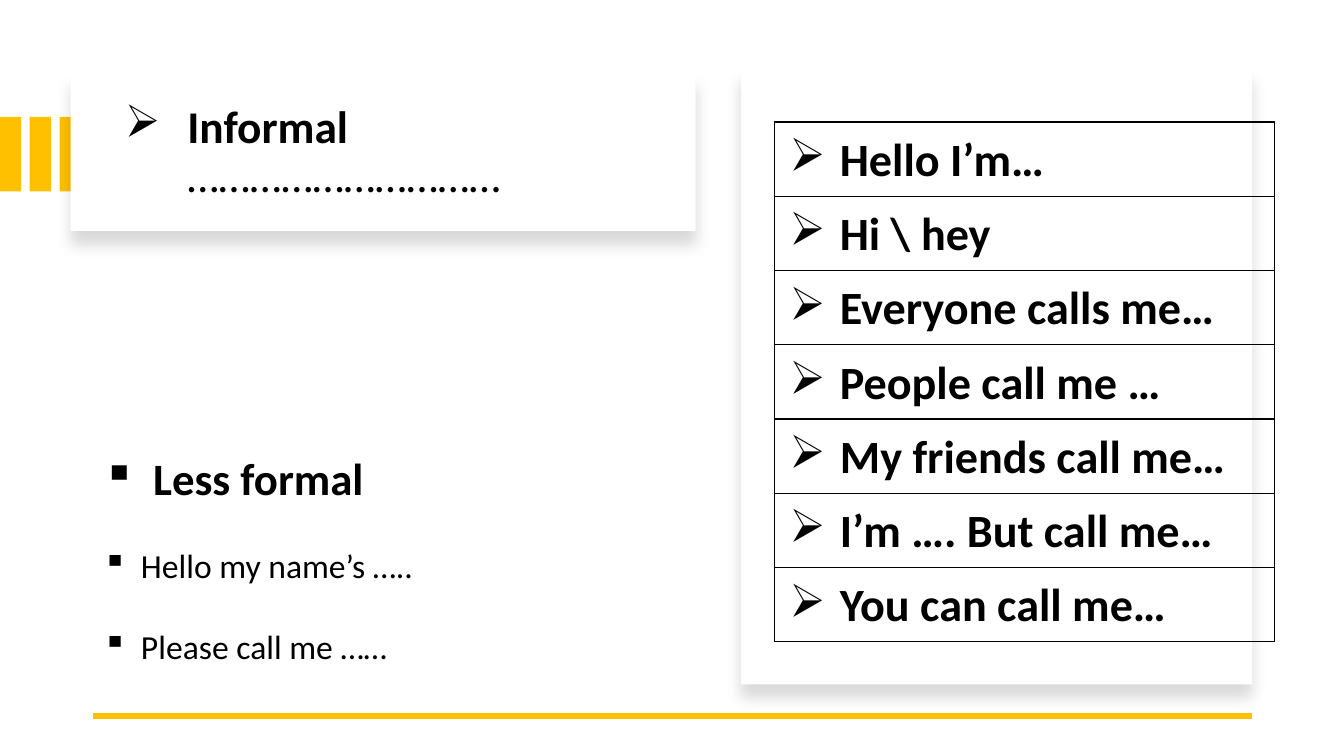
from lxml.etree import SubElement
from pptx import Presentation
from pptx.dml.color import RGBColor
from pptx.enum.shapes import MSO_CONNECTOR as Connector, MSO_SHAPE as Shape
from pptx.enum.text import MSO_ANCHOR as Anchor
from pptx.oxml import parse_xml
from pptx.oxml.ns import nsdecls, qn
from pptx.util import Inches, Pt

AMBER = RGBColor(0xFF, 0xC0, 0x00)
WHITE = RGBColor(0xFF, 0xFF, 0xFF)
BLACK = RGBColor(0x00, 0x00, 0x00)
ARROW, SQUARE = "➢", "▪"


def add_text(paragraph, text, size=24, bold=False):
    run = paragraph.add_run()
    run.text = text
    run.font.name = "Calibri"
    run.font.size = Pt(size)
    run.font.bold = bold
    run.font.color.rgb = BLACK


def set_bullet(paragraph, char, indent):
    props = paragraph._p.get_or_add_pPr()
    props.set("marL", str(Inches(indent)))
    props.set("indent", str(-Inches(indent)))
    SubElement(props, qn("a:buChar")).set("char", char)


class GreetingSlide:
    font_size = 33
    border = Pt(1)

    def __init__(self, presentation):
        self.slide = presentation.slides.add_slide(presentation.slide_layouts[6])

    def block(self, left, top, width, height, color):
        block = self.slide.shapes.add_shape(
            Shape.RECTANGLE, Inches(left), Inches(top), Inches(width), Inches(height))
        block.shadow.inherit = False
        block.fill.solid()
        block.fill.fore_color.rgb = color
        block.line.fill.background()
        return block

    def card(self, left, top, width, height):
        card = self.block(left, top, width, height, WHITE)
        effects = card._element.spPr.find(qn("a:effectLst"))
        effects.append(parse_xml(
            f'<a:outerShdw {nsdecls("a")} blurRad="{Pt(11)}" dist="{Pt(10)}" '
            f'dir="5400000" algn="t" rotWithShape="0"><a:srgbClr val="{BLACK}">'
            '<a:alpha val="15000"/></a:srgbClr></a:outerShdw>'))

    def rule(self, left, right, y):
        rule = self.slide.shapes.add_connector(
            Connector.STRAIGHT, Inches(right), Inches(y), Inches(left), Inches(y))
        rule.line.color.rgb = AMBER
        rule.line.width = Pt(4.5)
        SubElement(rule._element.spPr, qn("a:effectLst"))

    def text_frame(self, left, top, width, height, anchor=Anchor.TOP):
        frame = self.slide.shapes.add_textbox(
            Inches(left), Inches(top), Inches(width), Inches(height)).text_frame
        frame.word_wrap = True
        frame.vertical_anchor = anchor
        return frame

    def phrase_table(self, left, top, width, row_height, phrases):
        table = self.slide.shapes.add_table(
            len(phrases), 1, Inches(left), Inches(top), Inches(width),
            Inches(row_height * len(phrases))).table
        table.first_row = table.horz_banding = False
        for row, phrase in zip(table.rows, phrases):
            row.height = Inches(row_height)
            cell = row.cells[0]
            cell.margin_left = cell.margin_right = Inches(0.15)
            cell.margin_top, cell.margin_bottom = Inches(0.02), 0
            cell.fill.background()
            self.outline(cell)
            paragraph = cell.text_frame.paragraphs[0]
            paragraph.line_spacing = 1.15
            set_bullet(paragraph, ARROW, 0.5)
            add_text(paragraph, phrase, size=self.font_size, bold=True)

    def outline(self, cell):
        props = cell._tc.get_or_add_tcPr()
        for place, side in enumerate("LRTB"):
            props.insert(place, parse_xml(
                f'<a:ln{side} {nsdecls("a")} w="{self.border}"><a:solidFill>'
                f'<a:srgbClr val="{BLACK}"/></a:solidFill></a:ln{side}>'))


def main():
    presentation = Presentation()
    presentation.slide_width = Inches(13.33)
    presentation.slide_height = Inches(7.5)
    greetings = GreetingSlide(presentation)

    # Amber bars at the left edge
    for index in range(3):
        greetings.block(index * 0.295, 1.16, 0.21, 0.74, AMBER)

    # Title card
    greetings.card(0.7, 0.72, 6.2, 1.57)
    title = greetings.text_frame(1.14, 0.96, 5.53, 1.13, Anchor.MIDDLE).paragraphs[0]
    title.line_spacing = 0.9
    set_bullet(title, ARROW, 0.62)
    add_text(title, "Informal ", size=32.4, bold=True)
    add_text(title, "…………………………", size=32.4)

    # Informal phrases
    greetings.card(7.35, 0.67, 5.07, 6.12)
    greetings.rule(0.92, 12.42, 7.1)
    greetings.phrase_table(7.68, 1.21, 4.96, 0.737, [
        "Hello I’m…", "Hi \\ hey", "Everyone calls me…", "People call me …",
        "My friends call me…", "I’m …. But call me…", "You can call me…"])

    # Less formal phrases
    less_formal = greetings.text_frame(0.92, 4.42, 4.75, 2.26)
    heading = less_formal.paragraphs[0]
    set_bullet(heading, SQUARE, 0.5)
    add_text(heading, "Less formal", size=32, bold=True)
    for phrase in ("Hello my name’s …..", "Please call me ……"):
        paragraph = less_formal.add_paragraph()
        paragraph.space_before = Pt(29)
        set_bullet(paragraph, SQUARE, 0.38)
        add_text(paragraph, phrase)

    presentation.save("out.pptx")


if __name__ == "__main__":
    main()
